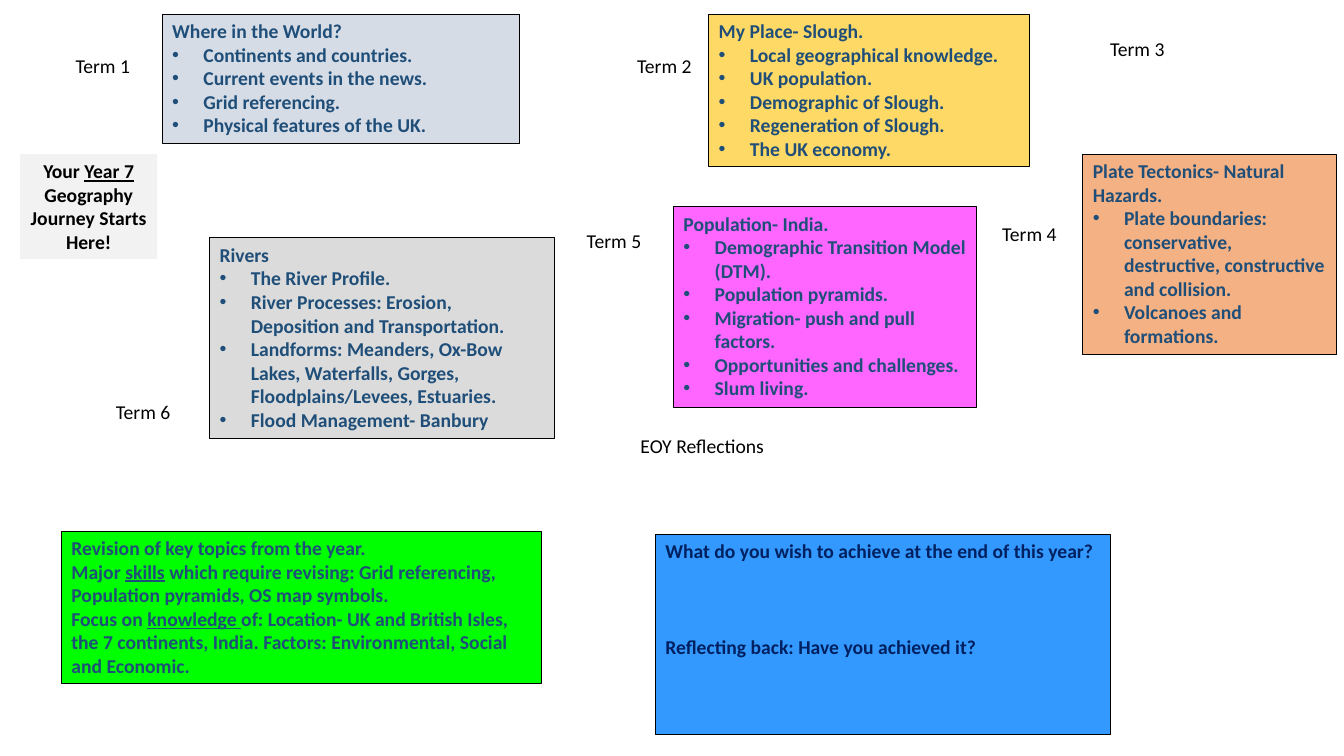
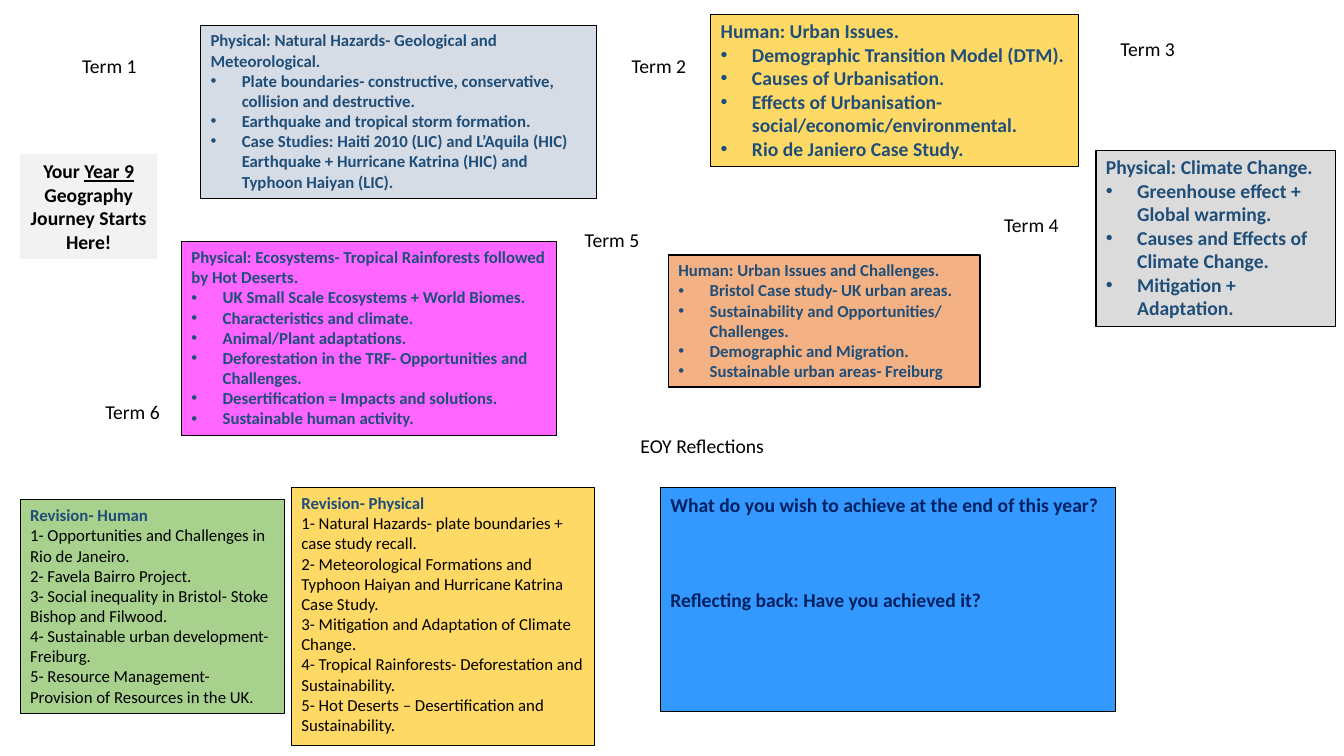
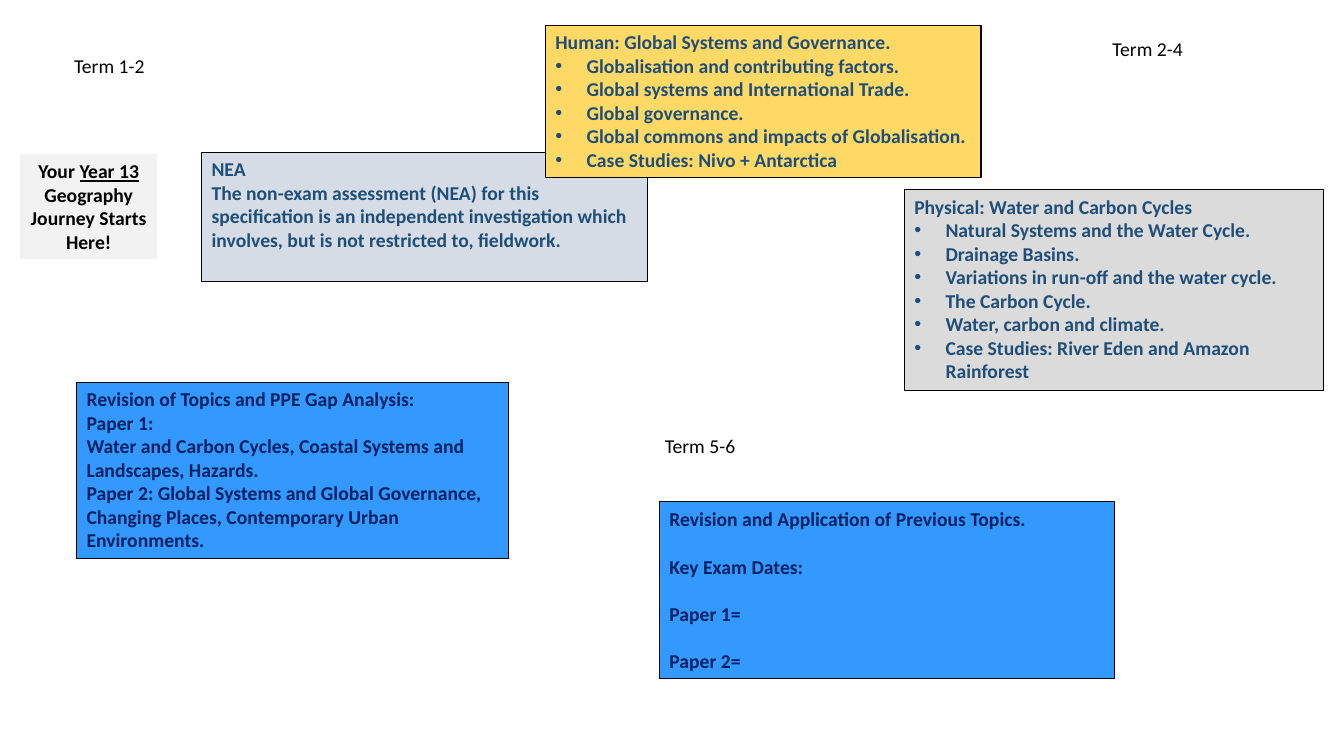
from lxml import etree
from pptx import Presentation
from pptx.dml.color import RGBColor
from pptx.enum.text import MSO_ANCHOR, MSO_AUTO_SIZE, PP_ALIGN
from pptx.oxml.ns import qn
from pptx.util import Inches, Pt

# Shared look
FONT = "Calibri"
BLACK, WHITE, PALE = "000000", "FFFFFF", "F2F2F2"
TEAL, NAVY = "1F4E79", "002060"
BLUE_GREY, YELLOW, ORANGE, GREY = "D6DCE5", "FFD966", "F4B183", "DBDBDB"
PINK, LIME, GREEN, BLUE = "FF66FF", "00FF00", "A9D18E", "3399FF"
INDENT = Inches(0.31)
LINE_HEIGHT = 1.22


def rgb(value):
    return RGBColor.from_string(value)


def add_box(s, at, fill, outlined=False):
    """Filled text box with the text starting at the top."""
    sp = s.shapes.add_textbox(*[Inches(n) for n in at])
    sp.fill.solid()
    sp.fill.fore_color.rgb = rgb(fill)
    if outlined:
        sp.line.color.rgb = rgb(BLACK)
        sp.line.width = Pt(0.75)
    tf = sp.text_frame
    tf.word_wrap = True
    tf.auto_size = MSO_AUTO_SIZE.NONE
    tf.vertical_anchor = MSO_ANCHOR.TOP
    return tf


def add_text(p, text, size=14, color=BLACK, bold=False):
    """Add runs; words between underscores are underlined."""
    for i, part in enumerate(text.split("_")):
        r = p.add_run()
        r.text = part
        r.font.name = FONT
        r.font.size = Pt(size)
        r.font.bold = bold
        r.font.underline = i % 2 == 1
        r.font.color.rgb = rgb(color)


def add_bullet(p):
    pPr = p._p.get_or_add_pPr()
    pPr.set("marL", str(INDENT))
    pPr.set("indent", str(-INDENT))
    etree.SubElement(pPr, qn("a:buFont"), typeface="Arial")
    etree.SubElement(pPr, qn("a:buChar"), char="•")


def add_card(s, at, fill, heading, lines, size=14, color=TEAL,
             bullets=False, plain=False, gap=0):
    """Outlined topic card; gap is the number of free lines between paragraphs."""
    tf = add_box(s, at, fill, outlined=True)
    add_text(tf.paragraphs[0], heading, size, color, bold=True)
    for line in lines:
        p = tf.add_paragraph()
        if bullets:
            add_bullet(p)
        if gap:
            p.space_before = Pt(round(gap * size * LINE_HEIGHT, 1))
        add_text(p, line, size, BLACK if plain else color, bold=not plain)


def add_topic(s, at, fill, heading, lines, size=14):
    add_card(s, at, fill, heading, lines, size, bullets=True)


def add_label(s, text, x, y, w, h=0.34, fill=WHITE, bold=False):
    p = add_box(s, (x, y, w, h), fill).paragraphs[0]
    p.alignment = PP_ALIGN.CENTER
    add_text(p, text, bold=bold)


def add_start(s, year):
    add_label(s, f"Your _Year {year} _Geography Journey Starts Here!",
              0.2, 1.53, 1.36, 1.04, PALE, bold=True)


def add_reflections(s, x, y, h):
    add_card(s, (x, y, 4.51, h), BLUE,
             "What do you wish to achieve at the end of this year?",
             ["Reflecting back: Have you achieved it?"], color=NAVY, gap=3)
    add_label(s, "EOY Reflections", 6.24, 4.26, 1.45)


def build_year_7(s):
    add_topic(s, (1.61, 0.14, 3.54, 1.28), BLUE_GREY, "Where in the World?", [
        "Continents and countries.", "Current events in the news.",
        "Grid referencing.", "Physical features of the UK."])
    add_topic(s, (7.03, 0.14, 3.18, 1.51), YELLOW, "My Place- Slough.", [
        "Local geographical knowledge.", "UK population.",
        "Demographic of Slough.", "Regeneration of Slough.",
        "The UK economy."])
    add_topic(s, (10.74, 1.53, 2.52, 1.99), ORANGE,
              "Plate Tectonics- Natural Hazards.", [
                  "Plate boundaries: conservative, destructive, "
                  "constructive and collision.",
                  "Volcanoes and formations."])
    add_topic(s, (2.08, 2.36, 3.42, 1.99), GREY, "Rivers", [
        "The River Profile.",
        "River Processes: Erosion, Deposition and Transportation.",
        "Landforms: Meanders, Ox-Bow Lakes, Waterfalls, Gorges, "
        "Floodplains/Levees, Estuaries.",
        "Flood Management- Banbury"])
    add_topic(s, (6.68, 2.05, 3.01, 1.99), PINK, "Population- India.", [
        "Demographic Transition Model (DTM).", "Population pyramids.",
        "Migration- push and pull factors.",
        "Opportunities and challenges.", "Slum living."])
    add_card(s, (0.61, 5.27, 4.76, 1.51), LIME,
             "Revision of key topics from the year.", [
                 "Major _skills_ which require revising: Grid referencing, "
                 "Population pyramids, OS map symbols.",
                 "Focus on _knowledge _of: Location- UK and British Isles, "
                 "the 7 continents, India. Factors: Environmental, Social "
                 "and Economic."])
    add_reflections(s, 6.5, 5.3, 1.99)
    add_start(s, 7)
    terms = [(0.61, 0.49), (6.18, 0.49), (10.87, 0.32),
             (9.8, 2.15), (5.68, 2.22), (1.01, 3.92)]
    for number, (x, y) in enumerate(terms, 1):
        add_label(s, f"Term {number}", x, y, 0.82)


def build_year_9(s):
    add_topic(s, (1.99, 0.25, 3.93, 1.72), BLUE_GREY,
              "Physical: Natural Hazards- Geological and Meteorological.", [
                  "Plate boundaries- constructive, conservative, collision "
                  "and destructive.",
                  "Earthquake and tropical storm formation.",
                  "Case Studies: Haiti 2010 (LIC) and L’Aquila (HIC) "
                  "Earthquake + Hurricane Katrina (HIC) and Typhoon Haiyan "
                  "(LIC)."], 12)
    add_topic(s, (7.05, 0.14, 3.65, 1.51), YELLOW, "Human: Urban Issues.", [
        "Demographic Transition Model (DTM).", "Causes of Urbanisation.",
        "Effects of Urbanisation- social/economic/environmental.",
        "Rio de Janiero Case Study."])
    add_topic(s, (6.63, 2.53, 3.09, 1.31), ORANGE,
              "Human: Urban Issues and Challenges.", [
                  "Bristol Case study- UK urban areas.",
                  "Sustainability and Opportunities/ Challenges.",
                  "Demographic and Migration.",
                  "Sustainable urban areas- Freiburg"], 12)
    add_topic(s, (10.87, 1.49, 2.38, 1.75), GREY, "Physical: Climate Change.", [
        "Greenhouse effect + Global warming.",
        "Causes and Effects of Climate Change.", "Mitigation + Adaptation."])
    add_topic(s, (1.8, 2.4, 3.72, 1.92), PINK,
              "Physical: Ecosystems- Tropical Rainforests followed by Hot "
              "Deserts.", [
                  "UK Small Scale Ecosystems + World Biomes.",
                  "Characteristics and climate.", "Animal/Plant adaptations.",
                  "Deforestation in the TRF- Opportunities and Challenges.",
                  "Desertification = Impacts and solutions.",
                  "Sustainable human activity."], 12)
    add_reflections(s, 6.55, 4.84, 2.22)
    add_start(s, 9)
    terms = [("Term 1", 0.61, 0.49, 0.95), ("Term 2", 6.09, 0.49, 0.89),
             ("Term 3 ", 10.87, 0.32, 1.07), ("Term 4", 9.76, 2.06, 0.94),
             ("Term 5", 5.6, 2.21, 0.94), ("Term 6", 0.9, 3.92, 0.83)]
    for term in terms:
        add_label(s, *term)
    add_card(s, (0.2, 4.96, 2.62, 2.12), GREEN, "Revision- Human", [
        "1- Opportunities and Challenges in Rio de Janeiro.",
        "2- Favela Bairro Project.",
        "3- Social inequality in Bristol- Stoke Bishop and Filwood.",
        "4- Sustainable urban development- Freiburg.",
        "5- Resource Management- Provision of Resources in the UK."],
        12, plain=True)
    add_card(s, (2.89, 4.84, 3.01, 2.56), YELLOW, "Revision- Physical", [
        "1- Natural Hazards- plate boundaries + case study recall.",
        "2- Meteorological Formations and Typhoon Haiyan and Hurricane "
        "Katrina Case Study.",
        "3- Mitigation and Adaptation of Climate Change.",
        "4- Tropical Rainforests- Deforestation and Sustainability.",
        "5- Hot Deserts – Desertification and Sustainability."],
        12, plain=True)


def build_year_13(s):
    add_card(s, (2, 1.51, 4.42, 1.28), BLUE_GREY, "NEA", [
        "The non-exam assessment (NEA) for this specification is an "
        "independent investigation which involves, but is not restricted "
        "to, fieldwork."])
    add_topic(s, (5.41, 0.25, 4.32, 1.51), YELLOW,
              "Human: Global Systems and Governance.", [
                  "Globalisation and contributing factors.",
                  "Global systems and International Trade.",
                  "Global governance.",
                  "Global commons and impacts of Globalisation.",
                  "Case Studies: Nivo + Antarctica"])
    add_topic(s, (8.97, 1.88, 4.16, 1.99), GREY,
              "Physical: Water and Carbon Cycles", [
                  "Natural Systems and the Water Cycle.", "Drainage Basins.",
                  "Variations in run-off and the water cycle.",
                  "The Carbon Cycle.", "Water, carbon and climate.",
                  "Case Studies: River Eden and Amazon Rainforest"])
    add_card(s, (6.54, 4.98, 4.51, 1.75), BLUE,
             "Revision and Application of Previous Topics.",
             ["Key Exam Dates:", "Paper 1=", "Paper 2="], color=NAVY, gap=1)
    add_start(s, 13)
    terms = [("Term 1-2", 0.61, 0.49, 0.95), ("Term 2-4 ", 10.87, 0.32, 1.07),
             ("Term 5-6 ", 6.24, 4.26, 1.45)]
    for term in terms:
        add_label(s, *term)
    add_card(s, (0.76, 3.79, 4.28, 1.75), BLUE,
             "Revision of Topics and PPE Gap Analysis:", [
                 "Paper 1:",
                 "Water and Carbon Cycles, Coastal Systems and Landscapes, "
                 "Hazards.",
                 "Paper 2: Global Systems and Global Governance, Changing "
                 "Places, Contemporary Urban Environments."], color=NAVY)


def main():
    prs = Presentation()
    prs.slide_width, prs.slide_height = Inches(13.33), Inches(7.5)
    blank = prs.slide_layouts[6]
    for build in (build_year_7, build_year_9, build_year_13):
        build(prs.slides.add_slide(blank))
    prs.save("out.pptx")


if __name__ == "__main__":
    main()
